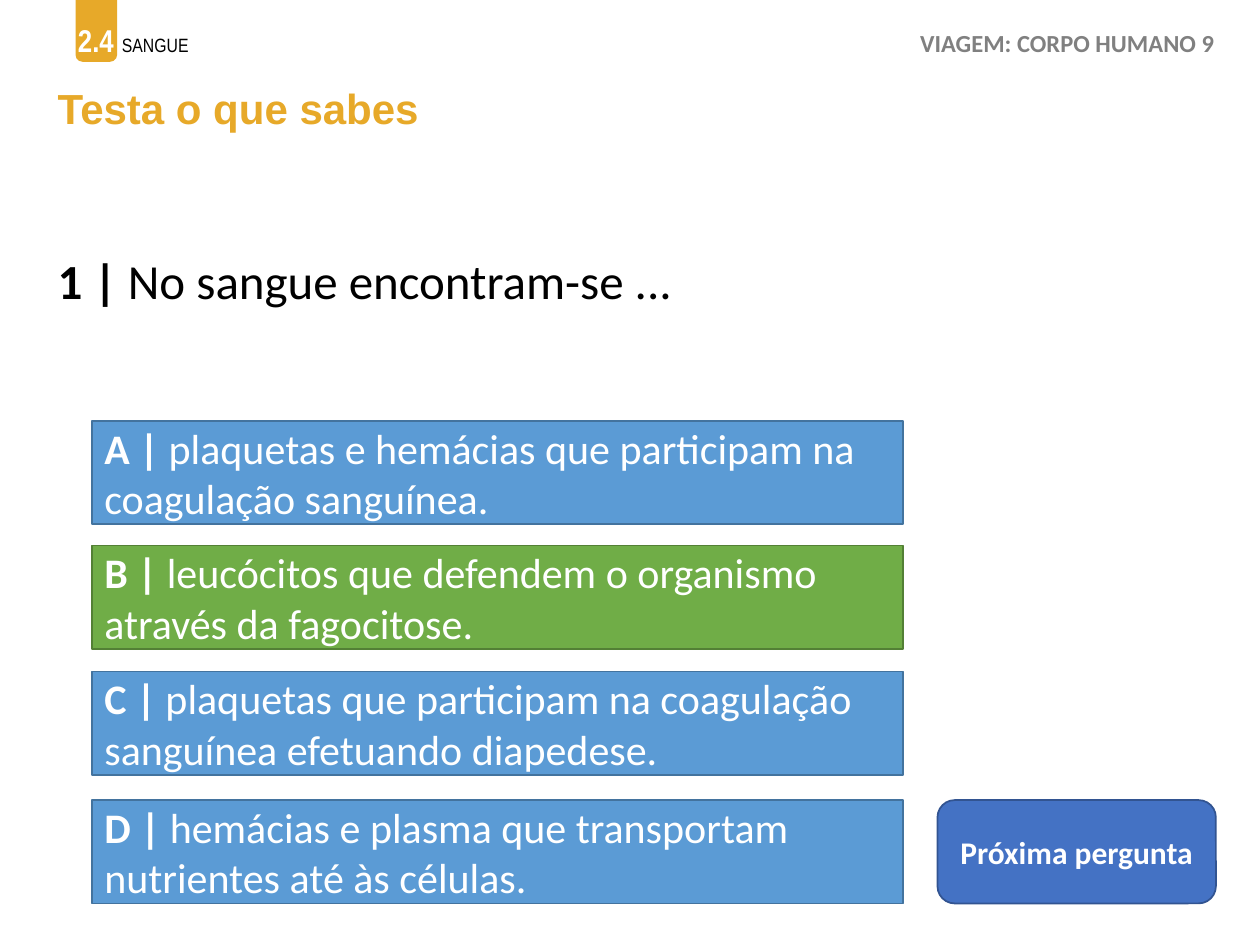
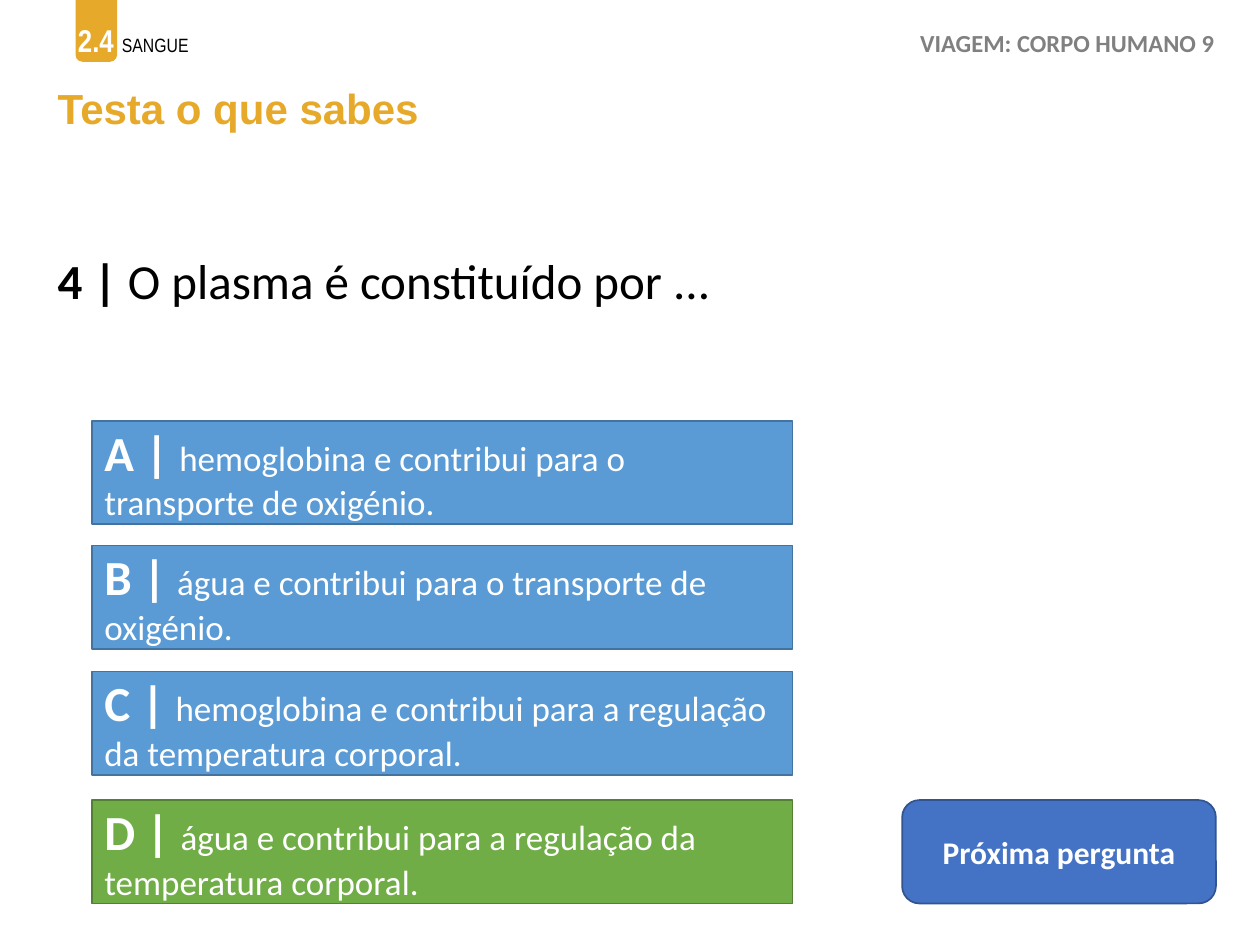
from dataclasses import dataclass

from pptx import Presentation
from pptx.dml.color import RGBColor
from pptx.enum.shapes import MSO_SHAPE
from pptx.enum.text import MSO_ANCHOR, MSO_AUTO_SIZE, PP_ALIGN
from pptx.shapes.autoshape import Shape
from pptx.slide import Slide
from pptx.util import Inches, Pt

RECTANGLE, ROUNDED = MSO_SHAPE.RECTANGLE, MSO_SHAPE.ROUNDED_RECTANGLE
LEFT, CENTER = PP_ALIGN.LEFT, PP_ALIGN.CENTER
TOP, MIDDLE = MSO_ANCHOR.TOP, MSO_ANCHOR.MIDDLE
GROW = MSO_AUTO_SIZE.SHAPE_TO_FIT_TEXT

WHITE = RGBColor(0xFF, 0xFF, 0xFF)
BLACK = RGBColor(0x00, 0x00, 0x00)
GREY = RGBColor(0x80, 0x80, 0x80)
AMBER = RGBColor(0xE7, 0xA9, 0x29)
LIME = RGBColor(0xAF, 0xC4, 0x39)
ANSWER_FILL = RGBColor(0x5B, 0x9B, 0xD5)
ANSWER_LINE = RGBColor(0x43, 0x73, 0x9E)
CORRECT_FILL = RGBColor(0x70, 0xAD, 0x47)
CORRECT_LINE = RGBColor(0x53, 0x80, 0x35)
BUTTON_FILL = RGBColor(0x44, 0x72, 0xC4)
BUTTON_LINE = RGBColor(0x32, 0x54, 0x91)

BODY_FONT, TITLE_FONT, CHAPTER_FONT = "Calibri", "Arial", "Arial Narrow"

MARGIN = 0.36
RIGHT_EDGE = 9.65
ANSWER_LEFT, ANSWER_HEIGHT = 0.73, 0.82
ANSWER_TOPS = (3.34, 4.33, 5.33, 6.35)

Box = tuple[float, float, float, float]


@dataclass(frozen=True)
class Question:
    number: str
    stem: str
    answers: tuple[str, ...]
    correct: str
    answer_width: float
    letter_size: int
    answer_size: int
    button_width: float


QUESTIONS = (
    Question(
        "1", "No sangue encontram-se ...",
        ("plaquetas e hemácias que participam na coagulação sanguínea.",
         "leucócitos que defendem o organismo através da fagocitose.",
         "plaquetas que participam na coagulação sanguínea efetuando diapedese.",
         "hemácias e plasma que transportam nutrientes até às células."),
        correct="B", answer_width=6.44, letter_size=24, answer_size=24,
        button_width=2.21,
    ),
    Question(
        "4", "O plasma é constituído por ...",
        ("hemoglobina e contribui para o transporte de oxigénio.",
         "água e contribui para o transporte de oxigénio.",
         "hemoglobina e contribui para a regulação da temperatura corporal.",
         "água e contribui para a regulação da temperatura corporal."),
        correct="D", answer_width=5.56, letter_size=28, answer_size=20,
        button_width=2.49,
    ),
)


def add_run(target: Shape, text: str, *, size: float, color: RGBColor = WHITE,
            bold: bool = False, font: str = BODY_FONT) -> None:
    """Append a formatted run to the shape's only paragraph."""
    run = target.text_frame.paragraphs[0].add_run()
    run.text = text
    run.font.name, run.font.size, run.font.bold = font, Pt(size), bold
    run.font.color.rgb = color


def add_text_box(slide: Slide, box: Box, *, align: PP_ALIGN = LEFT,
                 anchor: MSO_ANCHOR = TOP) -> Shape:
    text_box = slide.shapes.add_textbox(*map(Inches, box))
    frame = text_box.text_frame
    frame.word_wrap = True
    frame.vertical_anchor = anchor
    if anchor == TOP:
        frame.auto_size = GROW
    frame.paragraphs[0].alignment = align
    return text_box


def add_panel(slide: Slide, preset: MSO_SHAPE, box: Box, fill: RGBColor,
              line: RGBColor | None = None, align: PP_ALIGN = LEFT) -> Shape:
    panel = slide.shapes.add_shape(preset, *map(Inches, box))
    panel.shadow.inherit = False
    panel.fill.solid()
    panel.fill.fore_color.rgb = fill
    if line is None:
        panel.line.fill.background()
    else:
        panel.line.color.rgb = line
        panel.line.width = Pt(1)
    panel.text_frame.vertical_anchor = MIDDLE
    panel.text_frame.paragraphs[0].alignment = align
    return panel


def add_header(slide: Slide) -> None:
    add_panel(slide, ROUNDED, (0.6, -0.13, 0.33, 0.62), AMBER)
    chapter = add_text_box(slide, (0.52, 0.09, 7.15, 0.44))
    add_run(chapter, "2.4", size=18, bold=True, font=CHAPTER_FONT)
    add_run(chapter, " ", size=20, color=LIME, bold=True, font=CHAPTER_FONT)
    add_run(chapter, "SANGUE", size=11, color=BLACK, font=CHAPTER_FONT)

    course = add_text_box(slide, (7.18, 0.17, 2.58, 0.34), align=CENTER)
    add_run(course, "VIAGEM: CORPO HUMANO 9", size=14, color=GREY, bold=True)

    title = add_text_box(slide, (MARGIN, 0.57, RIGHT_EDGE - MARGIN, 0.62), anchor=MIDDLE)
    title.text_frame.paragraphs[0].line_spacing = 0.9
    add_run(title, "Testa o que sabes", size=24, color=AMBER, bold=True, font=TITLE_FONT)


def add_question(slide: Slide, question: Question) -> None:
    stem = add_text_box(slide, (MARGIN, 1.94, RIGHT_EDGE - MARGIN, 0.57))
    add_run(stem, f"{question.number} | ", size=28, color=BLACK, bold=True)
    add_run(stem, question.stem, size=28, color=BLACK)

    for letter, answer, top in zip("ABCD", question.answers, ANSWER_TOPS):
        fill, line = ((CORRECT_FILL, CORRECT_LINE) if letter == question.correct
                      else (ANSWER_FILL, ANSWER_LINE))
        box = (ANSWER_LEFT, top, question.answer_width, ANSWER_HEIGHT)
        option = add_panel(slide, RECTANGLE, box, fill, line)
        add_run(option, f"{letter} | ", size=question.letter_size, bold=True)
        add_run(option, answer, size=question.answer_size)

    button_box = (RIGHT_EDGE - question.button_width, ANSWER_TOPS[-1],
                  question.button_width, ANSWER_HEIGHT)
    next_button = add_panel(slide, ROUNDED, button_box, BUTTON_FILL, BUTTON_LINE, CENTER)
    add_run(next_button, "Próxima pergunta", size=18, bold=True)


def main() -> None:
    deck = Presentation()
    deck.slide_width, deck.slide_height = Inches(10), Inches(7.5)
    blank = deck.slide_layouts[6]
    for question in QUESTIONS:
        slide = deck.slides.add_slide(blank)
        add_header(slide)
        add_question(slide, question)
    deck.save("out.pptx")


if __name__ == "__main__":
    main()
